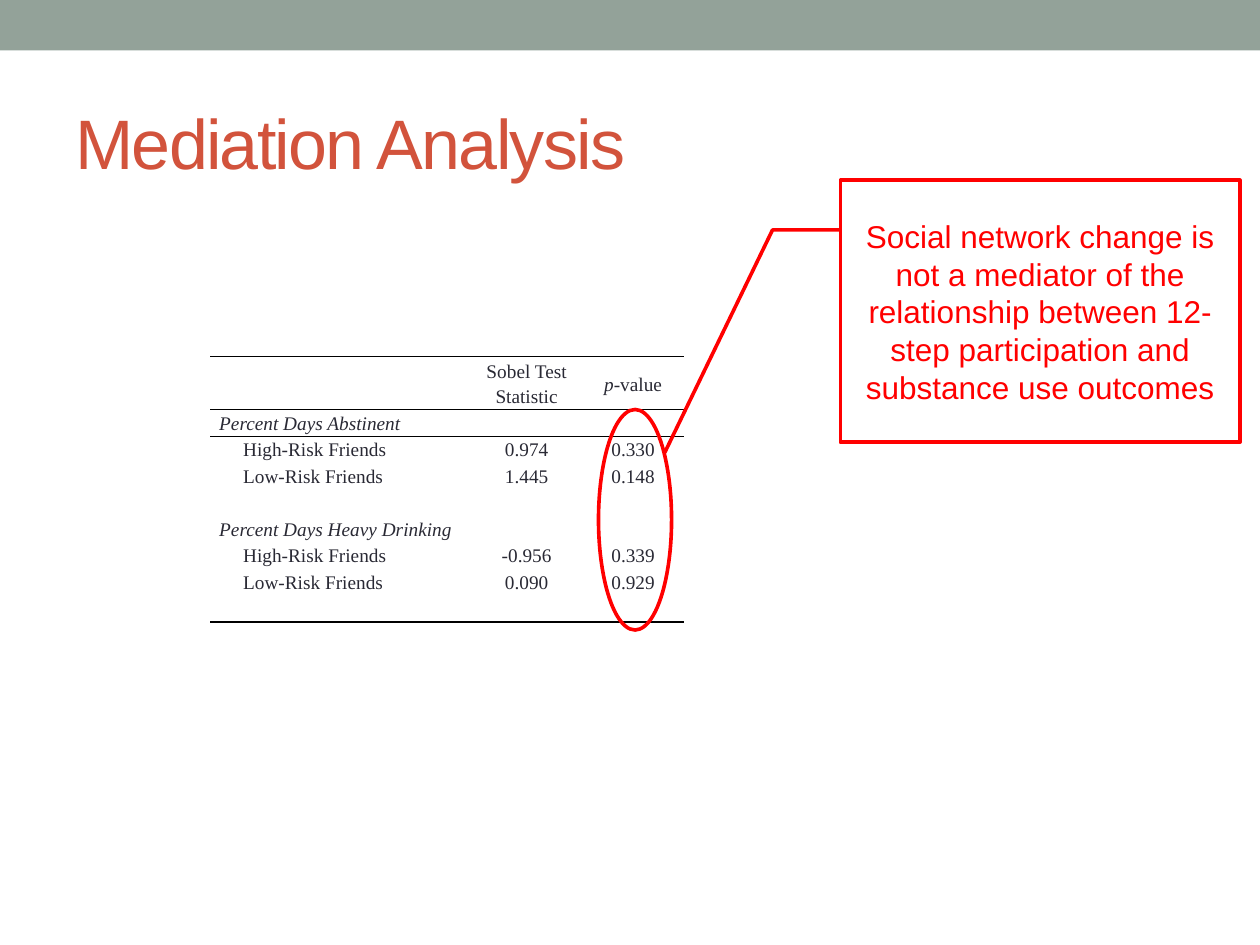
"""Build the mediation analysis slide with its results table and callout."""
from dataclasses import dataclass

import pptx
import pptx.dml.color
import pptx.enum.shapes
import pptx.enum.text
import pptx.oxml
import pptx.oxml.ns
import pptx.util

Inches = pptx.util.Inches
Pt = pptx.util.Pt
RGBColor = pptx.dml.color.RGBColor
Preset = pptx.enum.shapes.MSO_SHAPE
Align = pptx.enum.text.PP_ALIGN
Anchor = pptx.enum.text.MSO_ANCHOR

SAGE = RGBColor(0x93, 0xA2, 0x99)
RUST = RGBColor(0xD2, 0x53, 0x3C)
INK = RGBColor(0x29, 0x29, 0x34)
RED = RGBColor(0xFF, 0x00, 0x00)
RULE = RGBColor(0x00, 0x00, 0x00)
PLAIN_GRID = "{2D5ABB26-0587-4C30-8999-92F81FD0307C}"
COLUMN_WIDTHS = (0.19, 1.88, 0.88, 0.81)
HEADER_HEIGHT, ROW_HEIGHT = 0.39, 0.21
CELL_FORMAT = {
    "margin_left": Inches(0.07),
    "margin_right": Inches(0.07),
    "margin_top": 0,
    "margin_bottom": 0,
}


@dataclass
class Box:
    left: float
    top: float
    width: float
    height: float

    def lengths(self) -> tuple:
        return tuple(Inches(v) for v in (self.left, self.top, self.width, self.height))


@dataclass
class Style:
    size: float
    name: str
    color: RGBColor
    italic: bool = False


@dataclass
class ResultRow:
    label: str = ""
    statistic: str = ""
    p_value: str = ""


TITLE_STYLE = Style(40, "Arial", RUST)
CALLOUT_STYLE = Style(18, "Arial", RED)
BODY_STYLE = Style(11, "Times New Roman", INK)
ITALIC_STYLE = Style(11, "Times New Roman", INK, True)

RESULTS = (
    ResultRow("Percent Days Abstinent"),
    ResultRow("High-Risk Friends", "0.974", "0.330"),
    ResultRow("Low-Risk Friends", "1.445", "0.148"),
    ResultRow(),
    ResultRow("Percent Days Heavy Drinking"),
    ResultRow("High-Risk Friends", "-0.956", "0.339"),
    ResultRow("Low-Risk Friends", "0.090", "0.929"),
    ResultRow(),
)


def add_run(paragraph, text: str, style: Style):
    run = paragraph.add_run()
    run.text = text
    formats = {"size": Pt(style.size), "name": style.name, "italic": style.italic}
    for attribute, value in formats.items():
        setattr(run.font, attribute, value)
    run.font.color.rgb = style.color
    return run


def add_outline(slide, preset, box: Box):
    outline = slide.shapes.add_shape(preset, *box.lengths())
    outline.shadow.inherit = False
    outline.fill.background()
    outline.line.color.rgb = RED
    outline.line.width = Pt(2.08)
    return outline


def add_rule(cell, edge: str, points: float) -> None:
    rule = pptx.oxml.parse_xml(
        f'<a:{edge} {pptx.oxml.ns.nsdecls("a")} w="{Pt(points)}">'
        f'<a:solidFill><a:srgbClr val="{RULE}"/></a:solidFill></a:{edge}>'
    )
    cell._tc.get_or_add_tcPr().insert(0, rule)


def fill_cell(cell, pieces: tuple, centered: bool) -> None:
    for attribute, value in CELL_FORMAT.items():
        setattr(cell, attribute, value)
    cell.fill.background()
    paragraph = cell.text_frame.paragraphs[0]
    paragraph.line_spacing = 1.15
    paragraph.alignment = Align.CENTER if centered else Align.LEFT
    for text, style in pieces:
        add_run(paragraph, text, style)
    ending = pptx.oxml.parse_xml(
        f'<a:endParaRPr {pptx.oxml.ns.nsdecls("a")} sz="{BODY_STYLE.size * 100}">'
        f'<a:latin typeface="{BODY_STYLE.name}"/></a:endParaRPr>'
    )
    paragraph._p.append(ending)


def row_cells(row: ResultRow) -> tuple:
    values = tuple(((v, BODY_STYLE),) if v else () for v in (row.statistic, row.p_value))
    if row.statistic:
        return ((), ((row.label, BODY_STYLE),), *values)
    heading = ((row.label, ITALIC_STYLE),) if row.label else ()
    return (heading, (), *values)


def add_results(slide) -> None:
    height = HEADER_HEIGHT + ROW_HEIGHT * len(RESULTS)
    box = Box(1.67, 2.83, sum(COLUMN_WIDTHS), height)
    frame = slide.shapes.add_table(len(RESULTS) + 1, len(COLUMN_WIDTHS), *box.lengths())
    results = frame.table
    results.first_row = results.horz_banding = False
    for style_id in frame.element.iter(pptx.oxml.ns.qn("a:tableStyleId")):
        style_id.text = PLAIN_GRID
    for column, width in zip(results.columns, COLUMN_WIDTHS):
        column.width = Inches(width)

    header = (
        (),
        (),
        (("Sobel Test Statistic", BODY_STYLE),),
        (("p", ITALIC_STYLE), ("-value", BODY_STYLE)),
    )
    contents = (header, *(row_cells(row) for row in RESULTS))
    for r, pieces_by_column in enumerate(contents):
        results.rows[r].height = Inches(ROW_HEIGHT if r else HEADER_HEIGHT)
        for c, pieces in enumerate(pieces_by_column):
            cell = results.cell(r, c)
            fill_cell(cell, pieces, centered=c > 1)
            if r == 0:
                cell.vertical_anchor = Anchor.MIDDLE
                add_rule(cell, "lnB", 0.75)
                add_rule(cell, "lnT", 1)
            elif r == 1:
                add_rule(cell, "lnT", 0.75)
            elif r == len(RESULTS):
                add_rule(cell, "lnB", 1)
        if r == 0 or not RESULTS[r - 1].statistic:
            results.cell(r, 0).merge(results.cell(r, 1))


def add_title(slide) -> None:
    title = slide.shapes.add_textbox(*Box(0.5, 0.58, 9, 1.08).lengths()).text_frame
    title.word_wrap = True
    title.vertical_anchor = Anchor.MIDDLE
    run = add_run(title.paragraphs[0], "Mediation Analysis", TITLE_STYLE)
    run.font._element.set("spc", "-100")


def add_callout(slide) -> None:
    callout = add_outline(slide, Preset.LINE_CALLOUT_2, Box(6.67, 1.43, 3.17, 2.08))
    for i, value in enumerate((0.19, 0, 0.19, -0.17, 1.04, -0.44)):
        callout.adjustments[i] = value
    message = callout.text_frame
    message.word_wrap = True
    message.vertical_anchor = Anchor.MIDDLE
    message.paragraphs[0].alignment = Align.CENTER
    add_run(
        message.paragraphs[0],
        "Social network change is not a mediator of the relationship between "
        "12-step participation and substance use outcomes",
        CALLOUT_STYLE,
    )


def main() -> None:
    deck = pptx.Presentation()
    deck.slide_width, deck.slide_height = Inches(10), Inches(7.5)
    slide = deck.slides.add_slide(deck.slide_layouts[6])
    band = slide.shapes.add_shape(Preset.RECTANGLE, *Box(0, 0, 10, 0.4).lengths())
    band.shadow.inherit = False
    band.fill.solid()
    band.fill.fore_color.rgb = SAGE
    band.line.fill.background()
    add_title(slide)
    add_results(slide)
    add_outline(slide, Preset.OVAL, Box(4.75, 3.25, 0.58, 1.75))
    add_callout(slide)
    deck.save("out.pptx")


if __name__ == "__main__":
    main()
